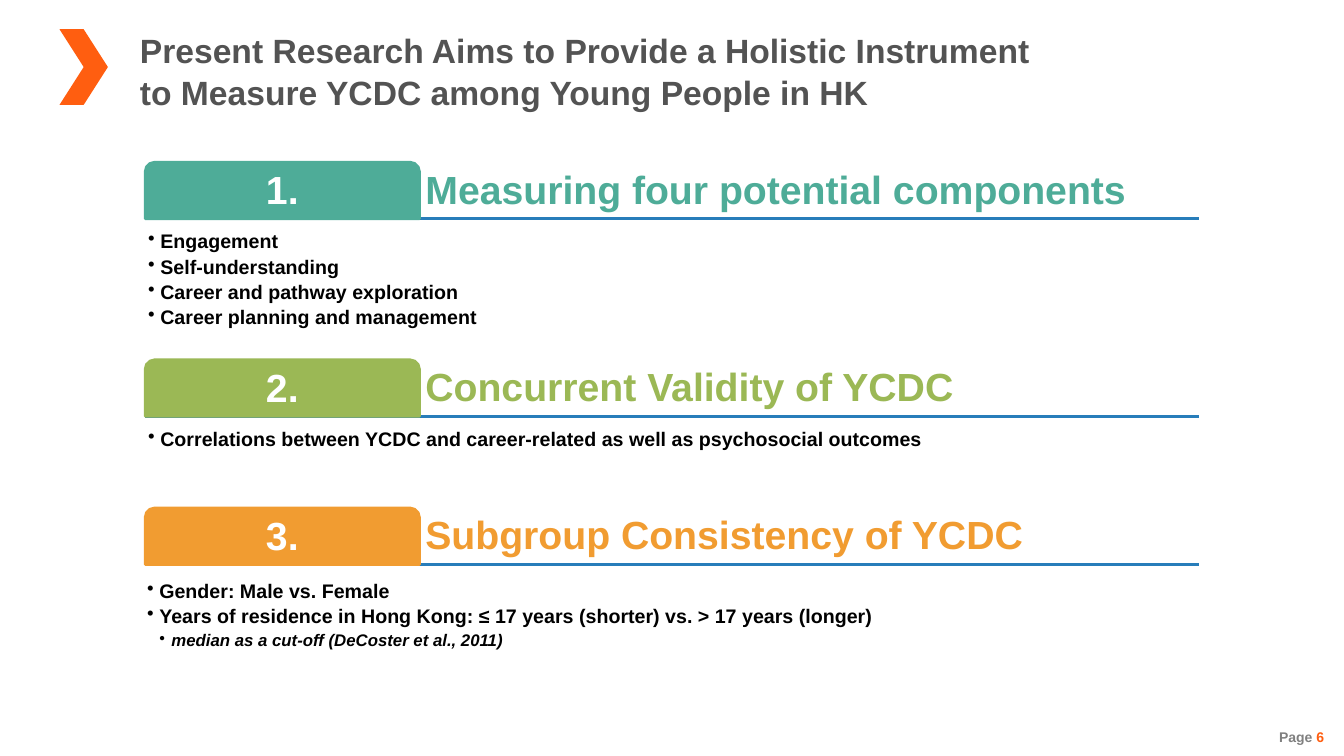
import pptx
import pptx.dml.color
import pptx.enum.shapes
import pptx.enum.text
import pptx.util
from lxml import etree
from pptx.dml.color import RGBColor
from pptx.enum.text import MSO_ANCHOR, PP_ALIGN
from pptx.util import Inches, Pt

GREY = RGBColor(0x53, 0x53, 0x53)
PAGE_GREY = RGBColor(0x80, 0x80, 0x80)
ORANGE = RGBColor(0xFF, 0x5E, 0x10)
BLUE = RGBColor(0x28, 0x7D, 0xBA)
TEAL = RGBColor(0x4E, 0xAC, 0x98)
GREEN = RGBColor(0x9B, 0xB8, 0x55)
AMBER = RGBColor(0xF1, 0x9C, 0x31)
BLACK = RGBColor(0, 0, 0)
WHITE = RGBColor(0xFF, 0xFF, 0xFF)

A_NS = "http://schemas.openxmlformats.org/drawingml/2006/main"
LEFT, TAB_WIDTH, TAB_HEIGHT, WIDTH = 1.44, 2.72, 0.56, 10.45

# Tab top, colour, heading, bullet box left and top, bullets as (level, text)
SECTIONS = [
    (1.61, TEAL, "Measuring four potential components", 1.44, 2.27,
     [(0, "Engagement"), (0, "Self-understanding"),
      (0, "Career and pathway exploration"),
      (0, "Career planning and management")]),
    (3.57, GREEN, "Concurrent Validity of YCDC", 1.44, 4.23,
     [(0, "Correlations between YCDC and career-related as well as "
          "psychosocial outcomes")]),
    (5.04, AMBER, "Subgroup Consistency of YCDC", 1.43, 5.74,
     [(0, "Gender: Male vs. Female"),
      (0, "Years of residence in Hong Kong: ≤ 17 years (shorter) vs. "
          "> 17 years (longer)"),
      (1, "median as a cut-off (DeCoster et al., 2011)")]),
]


def set_font(font, size, color):
    font.name = "Arial"
    font.size = Pt(size)
    font.bold = True
    font.color.rgb = color


def set_frame(frame, inset, anchor=MSO_ANCHOR.TOP):
    frame.word_wrap = True
    frame.vertical_anchor = anchor
    frame.margin_left = frame.margin_right = Inches(inset)
    frame.margin_top = frame.margin_bottom = Inches(inset)


def add_text_frame(slide, left, top, width, height):
    box = slide.shapes.add_textbox(
        Inches(left), Inches(top), Inches(width), Inches(height))
    return box.text_frame


def add_filled_shape(slide, kind, left, top, width, height, color):
    shape = slide.shapes.add_shape(
        kind, Inches(left), Inches(top), Inches(width), Inches(height))
    shape.shadow.inherit = False
    shape.fill.solid()
    shape.fill.fore_color.rgb = color
    shape.line.fill.background()
    return shape


def add_rule(slide, y):
    rule = slide.shapes.add_connector(
        pptx.enum.shapes.MSO_CONNECTOR.STRAIGHT,
        Inches(LEFT), Inches(y), Inches(LEFT + WIDTH), Inches(y))
    rule.line.color.rgb = BLUE
    rule.line.width = Pt(2)
    etree.SubElement(rule._element.spPr, f"{{{A_NS}}}effectLst")


def set_bullet(paragraph, level):
    properties = paragraph._p.get_or_add_pPr()
    properties.set("marL", str(Inches(0.12 * (level + 1))))
    properties.set("indent", str(Inches(-0.12)))
    color = etree.SubElement(properties, f"{{{A_NS}}}buClr")
    etree.SubElement(color, f"{{{A_NS}}}srgbClr", val=str(BLACK))
    etree.SubElement(properties, f"{{{A_NS}}}buChar", char="•")


def add_bullets(slide, left, top, bullets):
    frame = add_text_frame(slide, left, top, WIDTH, 1.12)
    set_frame(frame, 0.03)
    for index, (level, text) in enumerate(bullets):
        paragraph = frame.add_paragraph() if index else frame.paragraphs[0]
        paragraph.text = text
        set_bullet(paragraph, level)
        paragraph.level = level
        paragraph.line_spacing = 0.9
        paragraph.space_after = Pt(2.9)
        set_font(paragraph.font, 12 if level else 14, BLACK)
        paragraph.font.italic = level > 0


def add_heading_text(frame, text, color, anchor):
    set_frame(frame, 0.06, anchor)
    paragraph = frame.paragraphs[0]
    paragraph.text = text
    paragraph.line_spacing = 0.9
    set_font(paragraph.font, 28, color)
    return paragraph


def add_section(slide, number, top, color, heading, bullet_left, bullet_top, bullets):
    add_rule(slide, top + TAB_HEIGHT)

    # Numbered tab
    tab = add_filled_shape(
        slide, pptx.enum.shapes.MSO_SHAPE.ROUND_2_SAME_RECTANGLE,
        LEFT, top, TAB_WIDTH, TAB_HEIGHT, color)
    tab.line.color.rgb = color
    tab.line.width = Pt(2)
    label = add_heading_text(tab.text_frame, f"{number}.", WHITE, MSO_ANCHOR.MIDDLE)
    label.alignment = PP_ALIGN.CENTER

    # Heading and its bullets
    heading_frame = add_text_frame(
        slide, LEFT + TAB_WIDTH, top, WIDTH - TAB_WIDTH, TAB_HEIGHT)
    add_heading_text(heading_frame, heading, color, MSO_ANCHOR.BOTTOM)
    add_bullets(slide, bullet_left, bullet_top, bullets)


def add_title(slide, lines):
    frame = add_text_frame(slide, 1.29, 0.25, 9.9, 0.91)
    frame.word_wrap = True
    for index, line in enumerate(lines):
        paragraph = frame.add_paragraph() if index else frame.paragraphs[0]
        paragraph.text = line
        paragraph.space_after = Pt(1)
        set_font(paragraph.font, 24, GREY)


def add_page_number(slide, number):
    frame = add_text_frame(slide, 12.58, 7.18, 0.65, 0.27)
    frame.word_wrap = False
    paragraph = frame.paragraphs[0]
    paragraph.alignment = PP_ALIGN.RIGHT
    for text, color in (("Page ", PAGE_GREY), (number, ORANGE)):
        run = paragraph.add_run()
        run.text = text
        set_font(run.font, 10, color)


def main():
    deck = pptx.Presentation()
    deck.slide_width = Inches(13.33)
    deck.slide_height = Inches(7.5)
    slide = deck.slides.add_slide(deck.slide_layouts[6])

    # Title with its chevron
    add_title(slide, ["Present Research Aims to Provide a Holistic Instrument",
                      "to Measure YCDC among Young People in HK"])
    add_filled_shape(slide, pptx.enum.shapes.MSO_SHAPE.CHEVRON,
                     0.59, 0.29, 0.48, 0.75, ORANGE)

    # Three research aims
    for number, section in enumerate(SECTIONS, start=1):
        add_section(slide, number, *section)

    add_page_number(slide, "6")
    deck.save("out.pptx")


if __name__ == "__main__":
    main()
